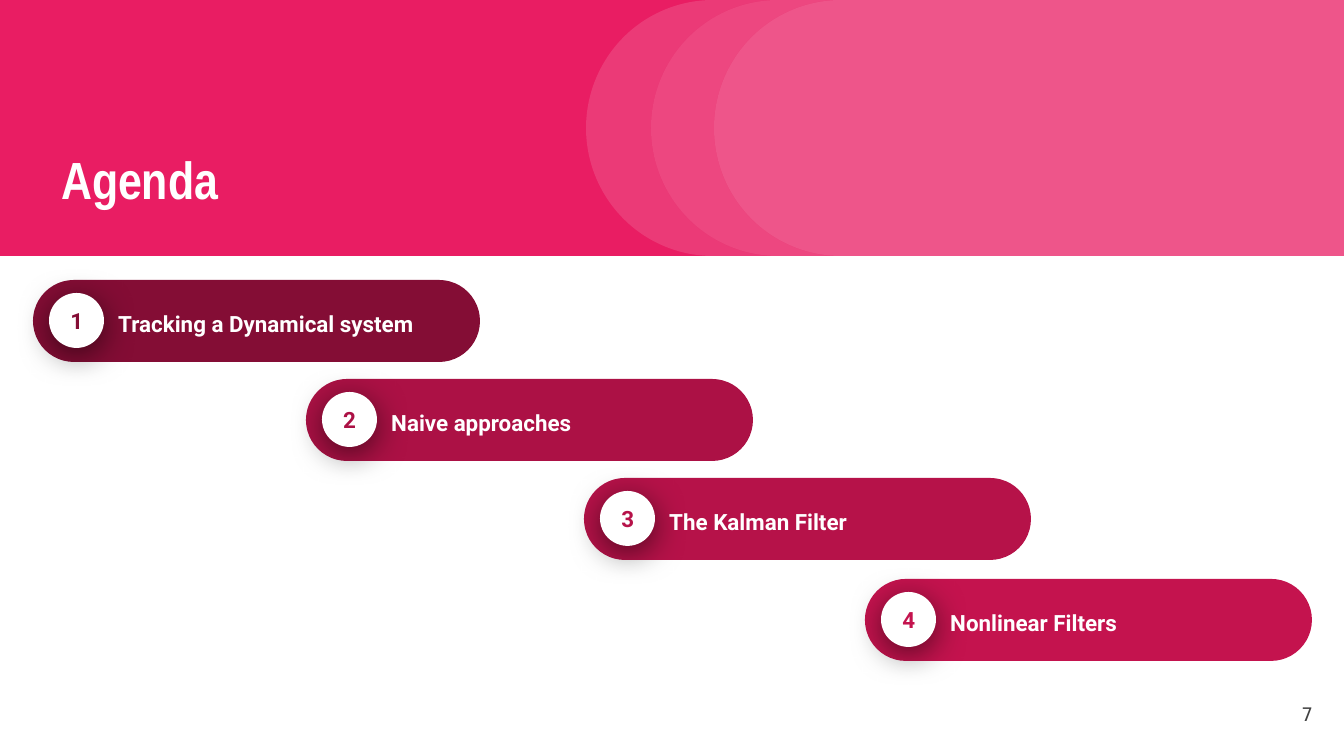
import pptx
import pptx.util
import pptx.dml.color
import pptx.enum.shapes
import pptx.enum.text
import pptx.oxml
import pptx.oxml.ns

COLORS = {"pink": "E91D63", "white": "FFFFFF", "gray": "424242", "black": "000000"}
AGENDA = [
    ("Tracking a Dynamical system", 33, 280, "840D35"),
    ("Naive approaches", 306, 379, "AC1145"),
    ("The Kalman Filter", 584, 478, "B61249"),
    ("Nonlinear Filters", 865, 579, "C4134E"),
]
ARCS = [(586, 13), (651, 19), (714, 25)]

SHAPE = pptx.enum.shapes.MSO_SHAPE
ALIGN = pptx.enum.text.PP_ALIGN
ANCHOR = pptx.enum.text.MSO_ANCHOR
PX = 914400 / 134.4


def emu(*lengths):
    return [pptx.util.Emu(round(n * PX)) for n in lengths]


def rgb(color):
    return pptx.dml.color.RGBColor.from_string(color)


def add_shape(s, kind, box, color, alpha=100):
    sp = s.shapes.add_shape(kind, *emu(*box))
    sp.shadow.inherit = False
    sp.fill.solid()
    sp.fill.fore_color.rgb = rgb(color)
    sp.line.fill.background()
    if alpha < 100:
        clr = sp.fill._xPr.find(".//" + pptx.oxml.ns.qn("a:srgbClr"))
        clr.append(pptx.oxml.parse_xml(
            f'<a:alpha {pptx.oxml.ns.nsdecls("a")} val="{alpha * 1000}"/>'))
    return sp


def add_shadow(sp):
    effects = sp._element.spPr.find(pptx.oxml.ns.qn("a:effectLst"))
    effects.append(pptx.oxml.parse_xml(
        f'<a:outerShdw {pptx.oxml.ns.nsdecls("a")} blurRad="{18 * 12700}" '
        f'dist="{4 * 12700}" dir="5400000" algn="bl" rotWithShape="0">'
        f'<a:srgbClr val="{COLORS["black"]}"><a:alpha val="55000"/></a:srgbClr>'
        '</a:outerShdw>'))


def set_text(sp, text, font, size, color, bold=True, align=ALIGN.LEFT,
             anchor=ANCHOR.MIDDLE, spacing=None):
    tf = sp.text_frame
    tf.word_wrap = True
    tf.vertical_anchor = anchor
    tf.margin_left = tf.margin_right = tf.margin_top = tf.margin_bottom = pptx.util.Inches(0.1)
    p = tf.paragraphs[0]
    p.text = text
    p.alignment = align
    p.line_spacing = spacing
    p.font.name = font
    p.font.size = pptx.util.Pt(size)
    p.font.bold = bold
    p.font.color.rgb = rgb(color)


def add_text(s, box, *args, **kwargs):
    set_text(s.shapes.add_textbox(*emu(*box)), *args, **kwargs)


def add_banner(s):
    add_shape(s, SHAPE.RECTANGLE, (0, 0, 1344, 256), COLORS["pink"])
    add_shape(s, SHAPE.RECTANGLE, (963, 0, 381, 256), COLORS["white"], 25)
    for x, alpha in ARCS:
        for color, opacity in ((COLORS["pink"], 100), (COLORS["white"], alpha)):
            sp = add_shape(s, SHAPE.FLOWCHART_DELAY, (x, 0, 254, 256), color, opacity)
            sp.rotation = 180


def add_item(s, number, label, x, y, color):
    bar = add_shape(s, SHAPE.ROUNDED_RECTANGLE, (x, y, 447, 82), color)
    bar.adjustments[0] = 0.5
    badge = add_shape(s, SHAPE.OVAL, (x + 16, y + 13, 55, 55), COLORS["white"])
    add_shadow(badge)
    set_text(badge, str(number), "Roboto", 12, color, align=ALIGN.CENTER)
    add_text(s, (x + 72, y + 13, 344, 58), label, "Roboto", 12, COLORS["white"], spacing=1.15)


def main():
    prs = pptx.Presentation()
    prs.slide_width, prs.slide_height = emu(1344, 756)
    s = prs.slides.add_slide(prs.slide_layouts[6])
    add_banner(s)
    add_text(s, (48, 22, 523, 201), "Agenda", "Arial Narrow", 28, COLORS["white"],
             anchor=ANCHOR.BOTTOM)
    add_text(s, (1245, 685, 81, 58), "7", "DejaVu Sans Mono", 10, COLORS["gray"],
             bold=False, align=ALIGN.RIGHT)
    for number, item in enumerate(AGENDA, 1):
        add_item(s, number, *item)
    prs.save("out.pptx")


if __name__ == "__main__":
    main()
